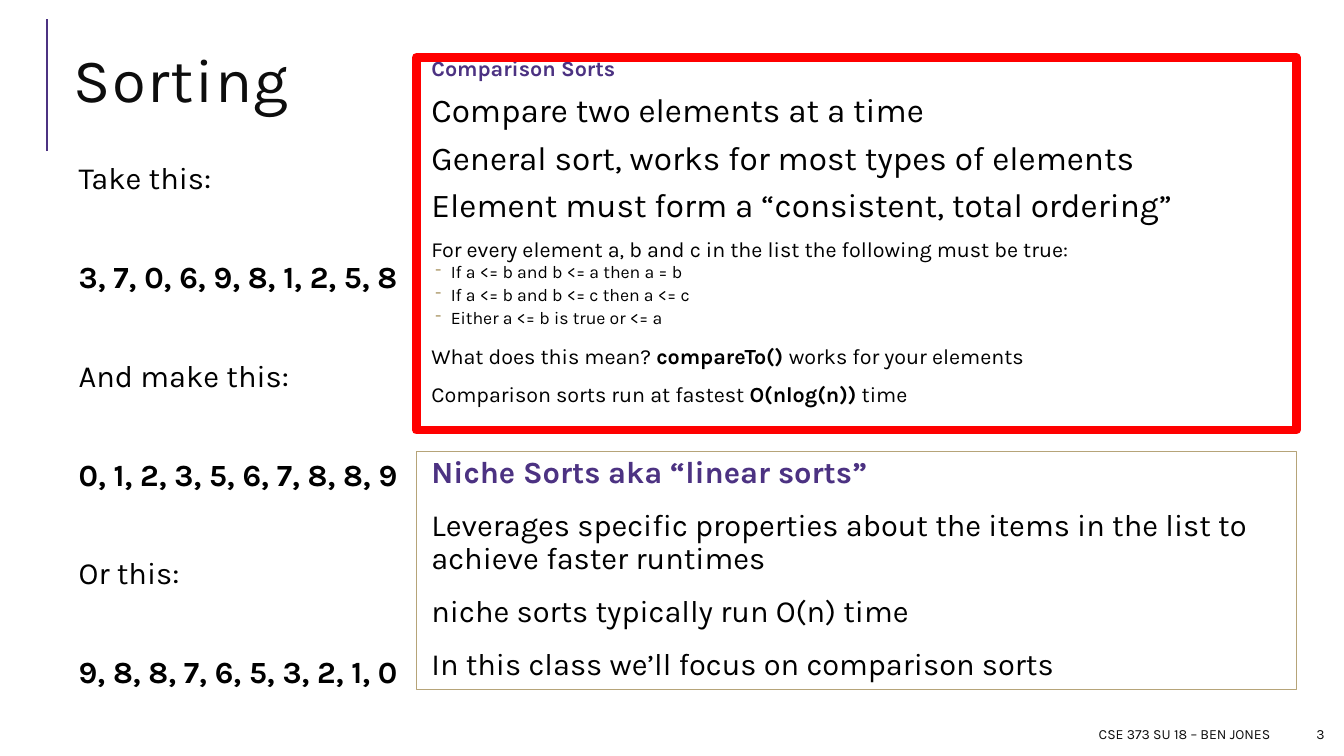
from lxml import etree
from pptx import Presentation
from pptx import util as u
from pptx.dml.color import RGBColor
from pptx.enum import shapes, text
from pptx.oxml import ns

Pt = u.Pt
PURPLE = RGBColor(0x4C, 0x32, 0x82)
GOLD = RGBColor(0xB6, 0xA4, 0x79)
RED = RGBColor(0xFF, 0x00, 0x00)
BLACK = RGBColor(0x00, 0x00, 0x00)
INK = RGBColor(0x0D, 0x0D, 0x0D)
LEFT, TOP, RIGHT = text.PP_ALIGN.LEFT, text.MSO_ANCHOR.TOP, text.PP_ALIGN.RIGHT
MIDDLE = text.MSO_ANCHOR.MIDDLE


def fill_frame(frame, lines, inset=3.6, anchor=TOP):
    frame_format = dict(word_wrap=True, auto_size=text.MSO_AUTO_SIZE.NONE, vertical_anchor=anchor)
    if inset is not None:
        for side in ("left", "top", "right", "bottom"):
            frame_format["margin_" + side] = Pt(inset)
    for name, value in frame_format.items():
        setattr(frame, name, value)
    for index, (spans, size, color, para_format, dashed) in enumerate(lines):
        para = frame.paragraphs[0] if index == 0 else frame.add_paragraph()
        for name, value in para_format.items():
            setattr(para, name, value)
        props = para._p.get_or_add_pPr()
        if inset is not None:
            props.set("marL", str(Pt(21 if dashed else 7.2)))
            props.set("indent", str(Pt(-11 if dashed else 0)))
        if dashed:
            bullet_color = etree.SubElement(props, ns.qn("a:buClr"))
            etree.SubElement(bullet_color, ns.qn("a:srgbClr"), val=str(GOLD))
            etree.SubElement(props, ns.qn("a:buChar"), char="-")
        else:
            etree.SubElement(props, ns.qn("a:buNone"))
        for words, bold in spans:
            span = para.add_run()
            span.text = words
            for name, value in dict(name="Karla", size=Pt(size), bold=bold).items():
                setattr(span.font, name, value)
            span.font.color.rgb = color


def add_frame(page, top, height, color, weight):
    box = page.shapes.add_shape(shapes.MSO_SHAPE.RECTANGLE, Pt(297.4), Pt(top), Pt(628.6), Pt(height))
    box.shadow.inherit = False
    box.fill.background()
    box.line.color.rgb = color
    box.line.width = Pt(weight)
    return box


deck = Presentation()
deck.slide_width, deck.slide_height = Pt(960), Pt(540)
page = deck.slides.add_slide(deck.slide_layouts[1])
title, body = page.placeholders

rule = page.shapes.add_connector(shapes.MSO_CONNECTOR.STRAIGHT, Pt(33.8), Pt(108), Pt(33.8), Pt(13.7))
rule.line.color.rgb = PURPLE
rule.line.width = Pt(1.5)
etree.SubElement(rule._element.spPr, ns.qn("a:effectLst"))

for holder, place in ((title, (45.4, 20.9, 880.6, 79.9)), (body, (45.4, 115.2, 302.4, 381.6))):
    for name, value in zip(("left", "top", "width", "height"), place):
        setattr(holder, name, Pt(value))

title_format = dict(alignment=LEFT, line_spacing=0.8)
fill_frame(title.text_frame, [([("Sorting", False)], 44, INK, title_format, False)], None, MIDDLE)
title.text_frame.paragraphs[0].runs[0].font._element.set("spc", "100")

examples = [
    ("Take this:", "3, 7, 0, 6, 9, 8, 1, 2, 5, 8"),
    ("And make this:", "0, 1, 2, 3, 5, 6, 7, 8, 8, 9"),
    ("Or this:", "9, 8, 8, 7, 6, 5, 3, 2, 1, 0"),
]
example_lines = []
for label, numbers in examples:
    for words, bold in ((label, False), (numbers, True)):
        before = 47.4 if example_lines else 12
        spacing = dict(alignment=LEFT, line_spacing=0.8, space_before=Pt(before), space_after=Pt(2))
        example_lines.append(([(words, bold)], 22, BLACK, spacing, False))
fill_frame(body.text_frame, example_lines)

for words, left, width in (("CSE 373 SU 18 – BEN JONES", 450, 464.4), ("3", 920.2, 33.1)):
    footer = page.shapes.add_textbox(Pt(left), Pt(513.4), Pt(width), Pt(21.6))
    fill_frame(footer.text_frame, [([(words, False)], 10, INK, dict(alignment=RIGHT), False)], None, MIDDLE)

tight = dict(alignment=LEFT, line_spacing=0.7, space_before=Pt(12), space_after=Pt(2))
nested = dict(tight, level=1, space_before=Pt(2), space_after=Pt(4))
loose = dict(tight, line_spacing=0.9)

comparison_lines = [([("Comparison Sorts", True)], 15.4, PURPLE, tight, False)]
for words in (
    "Compare two elements at a time",
    "General sort, works for most types of elements",
    "Element must form a “consistent, total ordering”",
):
    comparison_lines.append(([(words, False)], 23.8, BLACK, tight, False))
ordering = "For every element a, b and c in the list the following must be true:"
comparison_lines.append(([(ordering, False)], 15.4, BLACK, tight, False))
for words in (
    "If a <= b and b <= a then a = b",
    "If a <= b and b <= c then a <= c",
    "Either a <= b is true or <= a",
):
    comparison_lines.append(([(words, False)], 12.6, BLACK, nested, True))
for spans in (
    [("What does this mean? ", False), ("compareTo() ", True), ("works for your elements", False)],
    [("Comparison sorts run at fastest ", False), ("O(nlog(n))", True), (" time", False)],
):
    comparison_lines.append((spans, 15.4, BLACK, tight, False))
comparison = add_frame(page, 41, 266.4, GOLD, 0.75)
fill_frame(comparison.text_frame, comparison_lines)

niche_lines = [([("Niche Sorts aka “linear sorts”", True)], 22, PURPLE, loose, False)]
for words in (
    "Leverages specific properties about the items in the list to achieve faster runtimes",
    "niche sorts typically run O(n) time",
    "In this class we’ll focus on comparison sorts",
):
    niche_lines.append(([(words, False)], 22, BLACK, loose, False))
niche = add_frame(page, 322.6, 169.9, GOLD, 0.75)
fill_frame(niche.text_frame, niche_lines)

add_frame(page, 41, 266.4, RED, 6)

deck.save("out.pptx")
